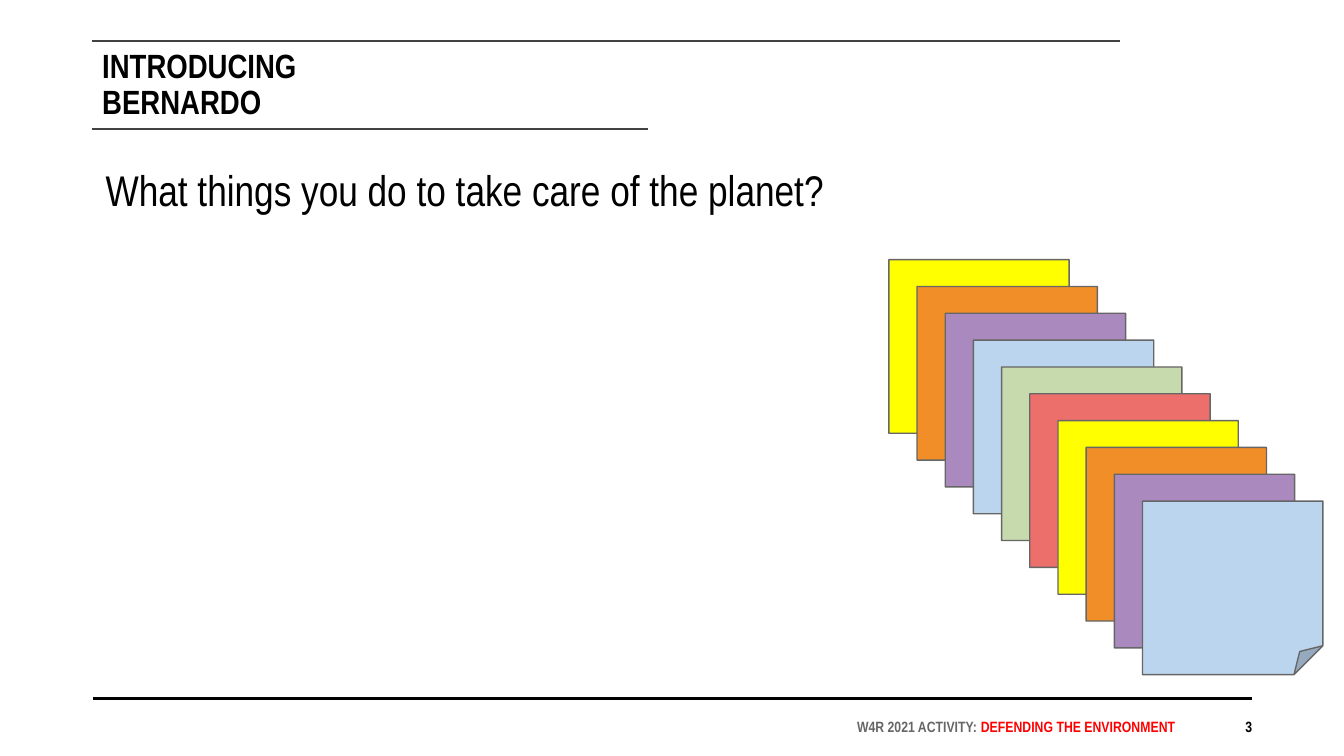
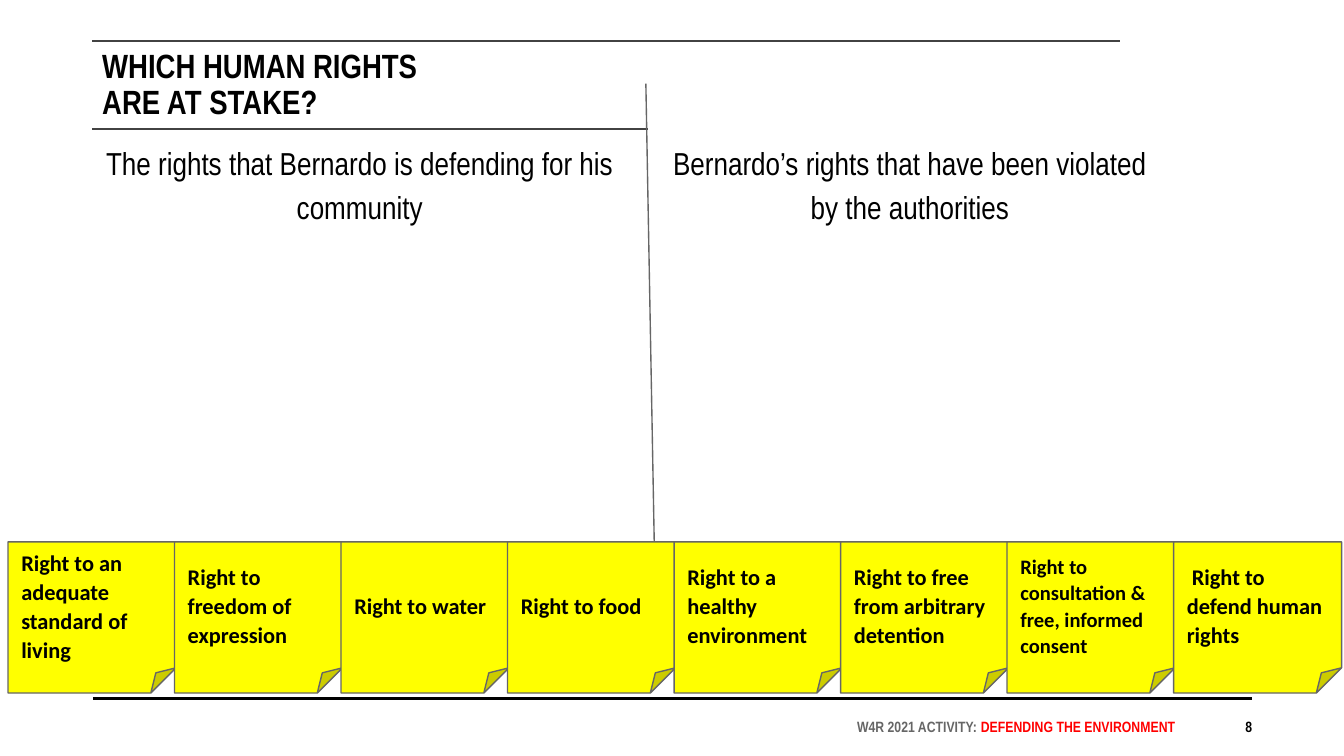
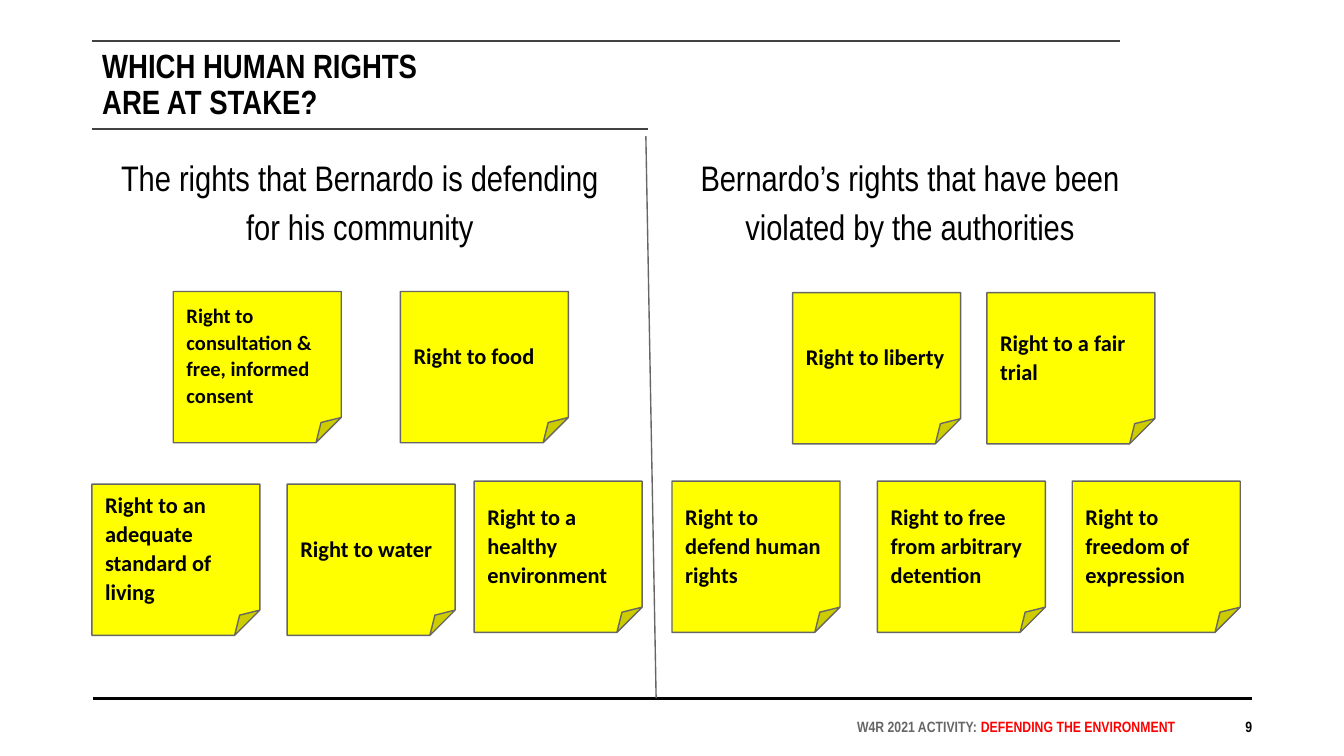
"""Builds three activity slides about Bernardo and the human rights at stake."""
from lxml import etree
from pptx import Presentation
from pptx.dml.color import RGBColor
from pptx.enum.shapes import MSO_CONNECTOR, MSO_SHAPE
from pptx.enum.text import MSO_ANCHOR, MSO_AUTO_SIZE, PP_ALIGN
from pptx.oxml.ns import qn
from pptx.util import Pt

STRAIGHT = MSO_CONNECTOR.STRAIGHT
FOLDED = MSO_SHAPE.FOLDED_CORNER
TOP, MIDDLE, BOTTOM = MSO_ANCHOR.TOP, MSO_ANCHOR.MIDDLE, MSO_ANCHOR.BOTTOM
LEFT, CENTER, RIGHT = PP_ALIGN.LEFT, PP_ALIGN.CENTER, PP_ALIGN.RIGHT
GROW = MSO_AUTO_SIZE.SHAPE_TO_FIT_TEXT
HEAD, BODY = "Arial Narrow", "Calibri"
rgb = RGBColor.from_string

BLACK, GREY, DARK, RED = "000000", "666666", "424242", "FF0000"
YELLOW, ORANGE, PURPLE, BLUE = "FFFF00", "F18E28", "AA89BE", "BBD5EE"
GREEN, CORAL = "C7DAAD", "EC6F6B"


def add_line(s, x1, y1, x2, y2, color, width):
    line = s.shapes.add_connector(STRAIGHT, Pt(x1), Pt(y1), Pt(x2), Pt(y2))
    line.line.color.rgb = rgb(color)
    line.line.width = Pt(width)
    etree.SubElement(line._element.spPr, qn("a:effectLst"))


def write(sp, text, size, font=HEAD, color=BLACK, bold=True, align=LEFT,
          anchor=TOP, spacing=1.0, inset=(0, 0)):
    tf = sp.text_frame
    tf.word_wrap = True
    tf.vertical_anchor = anchor
    tf.margin_left = tf.margin_right = Pt(inset[0])
    tf.margin_top = tf.margin_bottom = Pt(inset[1])
    tf.text = text
    for p in tf.paragraphs:
        p.alignment = align
        p.line_spacing = spacing
        for r in p.runs:
            r.font.name = font
            r.font.size = Pt(size)
            r.font.bold = bold
            r.font.color.rgb = rgb(color)


stack_colors = [YELLOW, ORANGE, PURPLE, BLUE, GREEN, CORAL, YELLOW, ORANGE, PURPLE, BLUE]
stack_notes = [(476.2 + 15.1 * i, 139.1 + 14.37 * i, color, "")
               for i, color in enumerate(stack_colors)]

adequate = "Right to an adequate standard of living"
freedom = "Right to freedom of expression"
water = "Right to water"
food = "Right to food"
healthy = "Right to a healthy environment"
detention = "Right to free from arbitrary detention"
consultation = "Right to consultation & free, informed consent"
defend = "Right to defend human rights"

row = [adequate, freedom, water, food, healthy, detention, consultation, " " + defend]
row_notes = [(4.3 + 89.2 * i, 290.3, YELLOW, text) for i, text in enumerate(row)]

sorted_notes = [(x, y, YELLOW, text) for x, y, text in [
    (92.8, 156.2, consultation),
    (214.5, 156.2, food),
    (49.2, 259.4, adequate),
    (153.8, 259.4, water),
    (254, 257.8, healthy),
    (424.6, 156.8, "Right to liberty"),
    (528.7, 156.8, "Right to a fair trial"),
    (360, 257.8, defend),
    (470, 257.8, detention),
    (574.4, 257.8, freedom),
]]

planet = [(49.5, 551, "What things you do to take care of the planet?")]
sides = [
    (49.5, 286.5, "The rights that Bernardo is defending for his community"),
    (348.5, 278, "Bernardo’s rights that have been violated by the authorities"),
]
rights_title = "WHICH HUMAN RIGHTS\nARE AT STAKE?"

slides = [
    ("3", "INTRODUCING\nBERNARDO", planet, 76.3, 23, LEFT, None, stack_notes, (96.6, 93)),
    ("8", rights_title, sides, 67, 17, CENTER, 44.8, row_notes, (90, 81)),
    ("9", rights_title, sides, 72.8, 19, CENTER, 73, sorted_notes, (90, 81)),
]

prs = Presentation()
prs.slide_width, prs.slide_height = Pt(720), Pt(405)

for number, title, prompts, prompt_y, prompt_size, align, divider_y, notes, note_size in slides:
    s = prs.slides.add_slide(prs.slide_layouts[6])
    add_line(s, 49.8, 374.1, 670.5, 374.1, BLACK, 1.5)
    add_line(s, 49.5, 21.9, 600, 21.9, DARK, 1)
    add_line(s, 49.5, 69.1, 347, 69.1, DARK, 1)

    footer = s.shapes.add_textbox(Pt(411.8), Pt(381.6), Pt(218), Pt(12.2))
    write(footer, "W4R 2021 ACTIVITY: ", 8, color=GREY, align=RIGHT, anchor=BOTTOM)
    r = footer.text_frame.paragraphs[0].add_run()
    r.text = "DEFENDING THE ENVIRONMENT"
    r.font.name, r.font.size, r.font.bold = HEAD, Pt(8), True
    r.font.color.rgb = rgb(RED)

    page = s.shapes.add_textbox(Pt(634.8), Pt(385.8), Pt(36), Pt(8))
    write(page, number, 8, align=RIGHT, anchor=BOTTOM)

    heading = s.shapes.add_textbox(Pt(49.5), Pt(26.5), Pt(244), Pt(37.5))
    write(heading, title, 18, spacing=0.9, inset=(5.3, 0))

    for x, width, text in prompts:
        prompt = s.shapes.add_textbox(Pt(x), Pt(prompt_y), Pt(width), Pt(60))
        write(prompt, text, prompt_size, bold=False, align=align, spacing=1.15, inset=(7.2, 7.2))
        prompt.text_frame.auto_size = GROW

    if divider_y is not None:
        add_line(s, 346, divider_y, 351.5, divider_y + 301, GREY, 0.75)

    for x, y, color, text in notes:
        note = s.shapes.add_shape(FOLDED, Pt(x), Pt(y), Pt(note_size[0]), Pt(note_size[1]))
        note.shadow.inherit = False
        note.fill.solid()
        note.fill.fore_color.rgb = rgb(color)
        note.line.color.rgb = rgb(GREY)
        note.line.width = Pt(0.75)
        if text:
            write(note, text, 11 if text == consultation else 12, font=BODY,
                  anchor=MIDDLE, spacing=1.08, inset=(7.2, 7.2))

prs.save("out.pptx")
